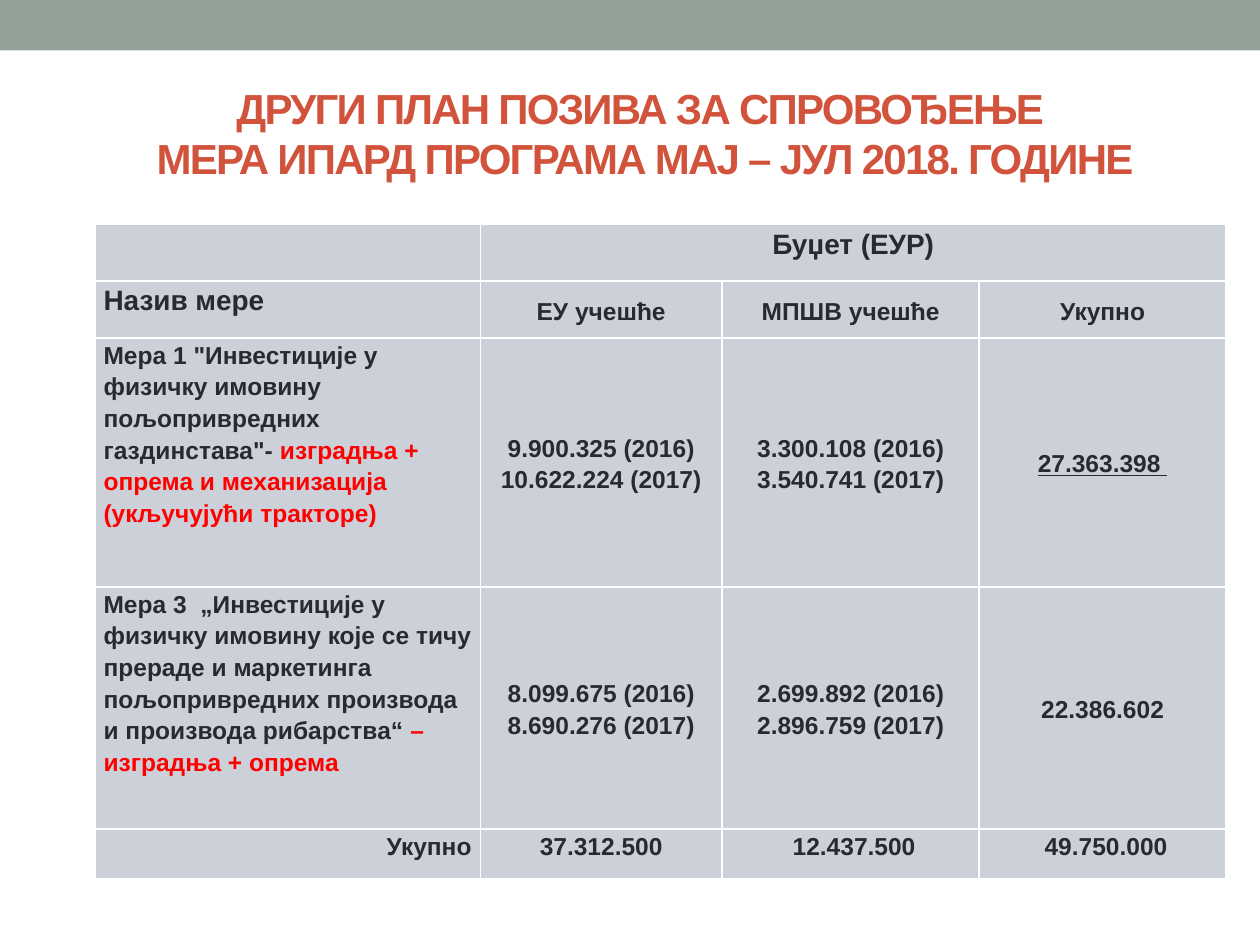
from pptx import Presentation
from pptx.dml.color import RGBColor
from pptx.enum.shapes import MSO_SHAPE as Shape
from pptx.enum.text import MSO_ANCHOR as Anchor, MSO_AUTO_SIZE as Fit, PP_ALIGN as Align
from pptx.util import Pt

FONT = "Arial"
HUES = {"band": "93A299", "title": "D2533C", "cell": "CCD1D9",
        "ink": "292934", "red": "FF0000"}

TITLE = ["ДРУГИ ПЛАН ПОЗИВА ЗА СПРОВОЂЕЊЕ ",
         "МЕРА ИПАРД ПРОГРАМА MAJ – ЈУЛ 2018. ГОДИНЕ"]

# Each cell is a list of paragraphs, each paragraph a list of runs;
# every second run in a paragraph is red
ROWS = [
    [[], [["Буџет (ЕУР)"]], [], []],
    [[["Назив мере"]], [["ЕУ учешће"]], [["МПШВ учешће"]], [["Укупно"]]],
    [[['Мера 1 "Инвестиције у физичку имовину пољопривредних газдинстава"- ',
       "изградња + опрема и механизација (укључујући тракторе)"]],
     [["9.900.325 (2016)"], ["10.622.224 (2017)"]],
     [["3.300.108 (2016)"], ["3.540.741 (2017)"]],
     [["27.363.398 "]]],
    [[["Мера 3  „Инвестиције у физичку имовину које се тичу прераде и "
       "маркетинга пољопривредних производа и производа рибарства“ ",
       "– изградња + опрема"]],
     [["8.099.675 (2016) 8.690.276 (2017)"]],
     [["2.699.892 (2016)"], ["2.896.759 (2017)"]],
     [["22.386.602"]]],
    [[["Укупно"]], [["37.312.500"]], [[" 12.437.500"]], [[" 49.750.000"]]],
]
WIDTHS = [220.3, 138.2, 146.9, 141.1]
HEIGHTS = [32.4, 32.4, 142.4, 138.2, 28.6]
BIG = {(0, 1), (1, 0)}
LAST = len(ROWS) - 1


def hue(name):
    return RGBColor.from_string(HUES[name])


def style(font, size, color):
    font.name, font.size, font.bold = FONT, Pt(size), True
    font.color.rgb = hue(color)


def add_band(slide):
    band = slide.shapes.add_shape(Shape.RECTANGLE, 0, 0, Pt(720), Pt(28.8))
    band.shadow.inherit = False
    band.fill.solid()
    band.fill.fore_color.rgb = hue("band")
    band.line.fill.background()


def add_title(slide):
    box = slide.shapes.add_textbox(Pt(48.2), Pt(43.2), Pt(640.8), Pt(65.5))
    frame = box.text_frame
    frame.word_wrap = True
    frame.auto_size = Fit.SHAPE_TO_FIT_TEXT
    frame.vertical_anchor = Anchor.MIDDLE
    for i, line in enumerate(TITLE):
        para = frame.add_paragraph() if i else frame.paragraphs[0]
        para.alignment = Align.CENTER
        style(para.font, 24, "title")
        run = para.add_run()
        run.text = line
        style(run.font, 24, "title")
        run.font._element.set("spc", "-100")  # tight letter spacing


def fill_cell(cell, paras, size, align):
    cell.fill.solid()
    cell.fill.fore_color.rgb = hue("cell")
    cell.margin_left = cell.margin_right = Pt(5)
    cell.margin_top = cell.margin_bottom = 0
    frame = cell.text_frame
    for i, runs in enumerate(paras):
        para = frame.add_paragraph() if i else frame.paragraphs[0]
        para.alignment = align
        para.line_spacing = 1.15
        style(para.font, size, "ink")
        for j, text in enumerate(runs):
            run = para.add_run()
            run.text = text
            style(run.font, size, "red" if j % 2 else "ink")


def add_budget(slide):
    table = slide.shapes.add_table(len(ROWS), len(WIDTHS), Pt(54.2), Pt(128.2),
                                   Pt(sum(WIDTHS)), Pt(sum(HEIGHTS))).table
    table.horz_banding = False
    for col, width in zip(table.columns, WIDTHS):
        col.width = Pt(width)
    for row, height in zip(table.rows, HEIGHTS):
        row.height = Pt(height)
    for r, row in enumerate(ROWS):
        for c, paras in enumerate(row):
            cell = table.cell(r, c)
            names = Align.RIGHT if r == LAST else Align.LEFT
            fill_cell(cell, paras, 16 if (r, c) in BIG else 14,
                      Align.CENTER if c else names)
            if c and 0 < r < LAST:
                cell.vertical_anchor = Anchor.MIDDLE
    table.cell(0, 1).merge(table.cell(0, 3))
    # Underlined total of the first measure
    table.cell(2, 3).text_frame.paragraphs[0].runs[0].font.underline = True


def main():
    deck = Presentation()
    deck.slide_width, deck.slide_height = Pt(720), Pt(540)
    slide = deck.slides.add_slide(deck.slide_layouts[6])
    add_band(slide)
    add_title(slide)
    add_budget(slide)
    deck.save("out.pptx")


if __name__ == "__main__":
    main()
